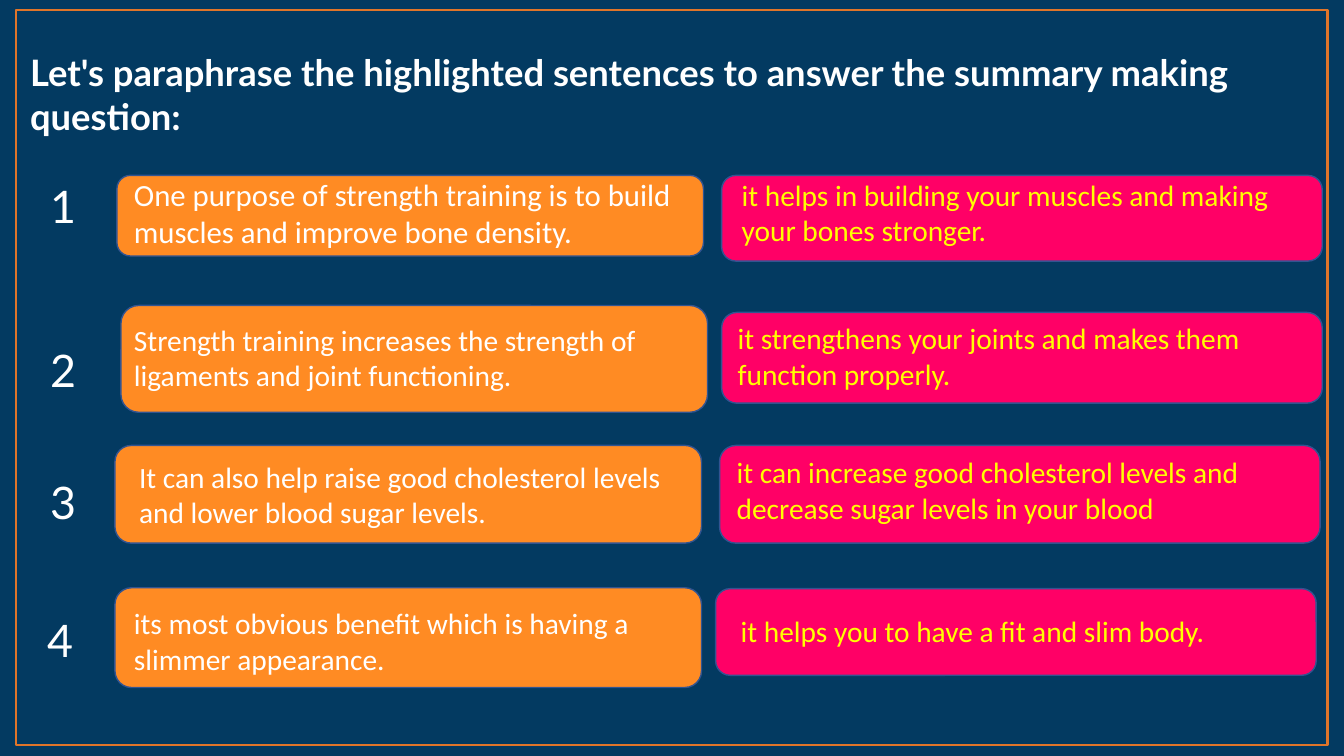
from pptx import Presentation
from pptx.dml.color import RGBColor
from pptx.enum.shapes import MSO_SHAPE as Shape
from pptx.enum.text import MSO_ANCHOR as Anchor, MSO_AUTO_SIZE as AutoSize
from pptx.util import Pt

COLORS = {
    "navy": "033A61",
    "orange": "FF8B23",
    "pink": "FF0066",
    "outline": "325491",
    "frame": "E0752A",
    "white": "FFFFFF",
    "yellow": "FFFF00",
}
SENTENCE_W, ANSWER_W = 419, 429

# Each row: number box (left, top), then for the sentence and the answer
# the card (left, top, height), the text box and the wording.
ROWS = [
    {
        "number": (28.8, 123.8),
        "sentence_card": (83.5, 125.3, 57.6),
        "sentence_box": (88.6, 123.8, 419, 56.9),
        "sentence": "One purpose of strength training is to build muscles and improve bone density.",
        "sentence_size": 22,
        "answer_card": (515.5, 125.3, 61.2),
        "answer_box": (522.7, 123.1, 432.7, 58.3),
        "answer": "it helps in building your muscles and making your bones stronger.",
    },
    {
        "number": (28.8, 241.2),
        "sentence_card": (86.4, 218.2, 76.3),
        "sentence_box": (88.6, 221.8, 412.6, 67),
        "sentence": "Strength training increases the strength of ligaments and joint functioning.",
        "answer_card": (515.5, 223.2, 64.8),
        "answer_box": (519.8, 225.4, 432.7, 58.3),
        "answer": "it strengthens your joints and makes them function properly.",
    },
    {
        "number": (28.8, 335.5),
        "sentence_card": (82.1, 318.2, 69.8),
        "sentence_box": (92.2, 321.1, 406.8, 63.4),
        "sentence": "It can also help raise good cholesterol levels and lower blood sugar levels.",
        "answer_card": (514, 318.2, 69.8),
        "answer_box": (519.1, 321.1, 414, 58.3),
        "answer": "it can increase good cholesterol levels and decrease sugar levels in your blood",
    },
    {
        "number": (26.6, 434.2),
        "sentence_card": (82.1, 419.8, 71.3),
        "sentence_box": (88.6, 425.5, 401, 64.1),
        "sentence": "its most obvious benefit which is having a slimmer appearance.",
        "answer_card": (511.2, 420.5, 61.9),
        "answer_box": (522, 434.2, 417.6, 32.4),
        "answer": "it helps you to have a fit and slim body.",
    },
]


def rgb(name):
    return RGBColor.from_string(COLORS[name])


class SlideBuilder:
    def __init__(self, slide, heading_font="Lato", body_font="Calibri"):
        self.s = slide
        self.heading_font = heading_font
        self.body_font = body_font

    def background(self, color):
        fill = self.s.background.fill
        fill.solid()
        fill.fore_color.rgb = rgb(color)

    def box(self, kind, left, top, width, height, line, weight, fill=None):
        """Draw a preset shape, hollow when no fill is given."""
        sp = self.s.shapes.add_shape(kind, Pt(left), Pt(top), Pt(width), Pt(height))
        sp.shadow.inherit = False
        if fill:
            sp.fill.solid()
            sp.fill.fore_color.rgb = rgb(fill)
        else:
            sp.fill.background()
        sp.line.color.rgb = rgb(line)
        sp.line.width = Pt(weight)

    def card(self, place, width, fill):
        left, top, height = place
        self.box(Shape.ROUNDED_RECTANGLE, left, top, width, height, "outline", 1, fill)

    def text(self, place, words, size, color="white", font=None, bold=False, middle=False):
        """Add a text box: fixed and centred vertically if middle, else growing."""
        sp = self.s.shapes.add_textbox(*(Pt(v) for v in place))
        tf = sp.text_frame
        tf.word_wrap = True
        tf.vertical_anchor = Anchor.MIDDLE if middle else Anchor.TOP
        tf.auto_size = AutoSize.NONE if middle else AutoSize.SHAPE_TO_FIT_TEXT
        r = tf.paragraphs[0].add_run()
        r.text = words
        r.font.name = font or self.body_font
        r.font.size = Pt(size)
        r.font.bold = bold
        r.font.color.rgb = rgb(color)

    def heading(self, place, words, size, bold=False):
        self.text(place, words, size, font=self.heading_font, bold=bold)


def main():
    prs = Presentation()
    prs.slide_width, prs.slide_height = Pt(960), Pt(540)
    b = SlideBuilder(prs.slides.add_slide(prs.slide_layouts[6]))
    b.background("navy")

    for row in reversed(ROWS):
        b.card(row["answer_card"], ANSWER_W, "pink")
        b.card(row["sentence_card"], SENTENCE_W, "orange")
    b.box(Shape.RECTANGLE, 11.5, 7.2, 936.7, 524.9, "frame", 1.5)

    b.heading(
        (14.4, 32.4, 938.2, 70.6),
        "Let's paraphrase the highlighted sentences to answer the summary making question:",
        26,
        bold=True,
    )
    for row in ROWS:
        b.text(row["sentence_box"], row["sentence"], row.get("sentence_size", 21), middle=True)
        b.text(row["answer_box"], row["answer"], 21, "yellow")
    for number, row in enumerate(ROWS, 1):
        b.heading((*row["number"], 33.8, 46.1), str(number), 32)

    prs.save("out.pptx")


if __name__ == "__main__":
    main()
